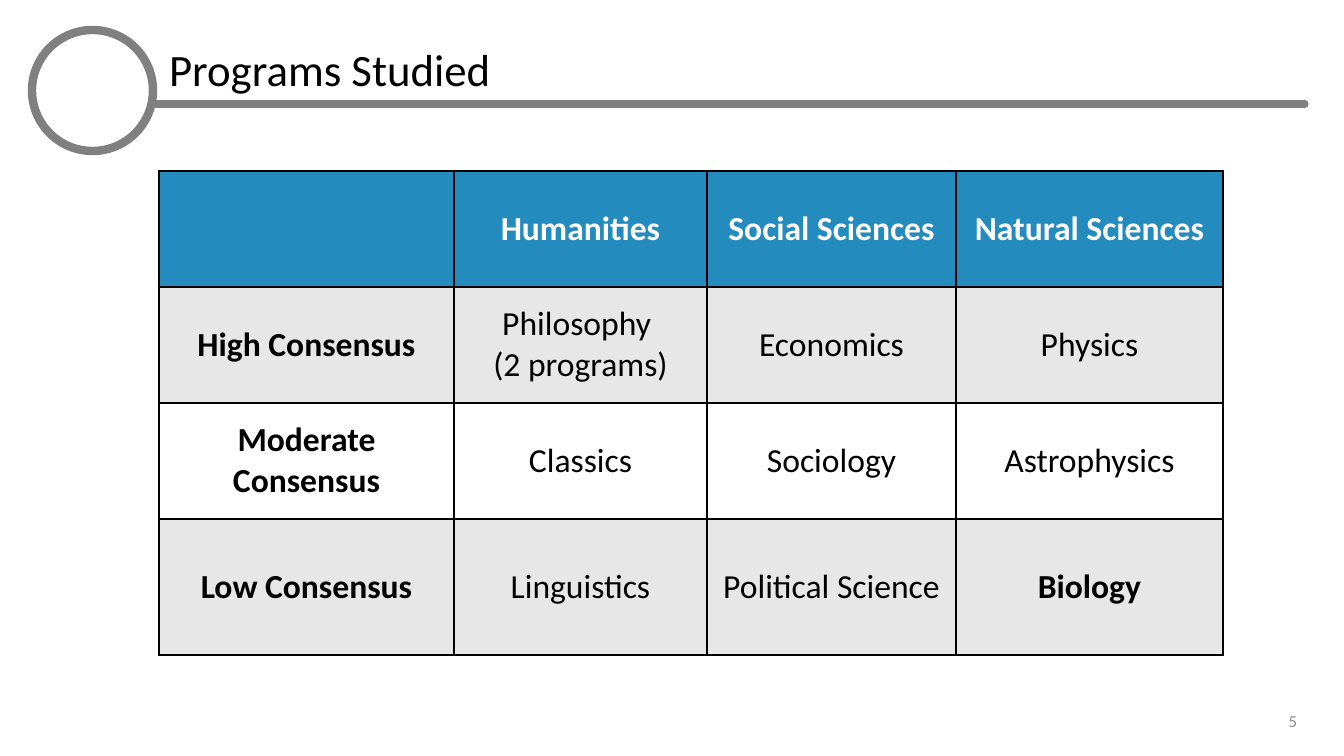
from pptx import Presentation
from pptx.dml.color import RGBColor
from pptx.enum.shapes import MSO_CONNECTOR, MSO_SHAPE
from pptx.enum.text import MSO_ANCHOR, PP_ALIGN
from pptx.oxml import parse_xml
from pptx.oxml.ns import nsdecls, qn
from pptx.util import Pt

EMU_PER_PX = 914400 / 100.8
BLACK = RGBColor(0x00, 0x00, 0x00)
WHITE = RGBColor(0xFF, 0xFF, 0xFF)
GREY = RGBColor(0x80, 0x80, 0x80)
NUMBER_GREY = RGBColor(0x8C, 0x8C, 0x8C)
BAND_GREY = RGBColor(0xE7, 0xE7, 0xE7)
HEADER_BLUE = RGBColor(0x23, 0x8B, 0xBE)

COLUMN_WIDTHS = [295, 253, 249, 267]
ROW_HEIGHTS = [116, 116, 116, 136]
PROGRAMS = [
    ["", "Humanities", "Social Sciences", "Natural Sciences"],
    ["High Consensus", "Philosophy \v(2 programs)", "Economics", "Physics"],
    ["Moderate Consensus", "Classics", "Sociology", "Astrophysics"],
    ["Low Consensus", "Linguistics", "Political Science", "Biology"],
]
BOLD_PROGRAMS = {"Biology"}


def px(*lengths):
    """Turn pixel lengths into EMU."""
    return [round(length * EMU_PER_PX) for length in lengths]


class SlideBuilder:
    """Holds the text style and the current slide."""

    def __init__(self, presentation):
        """Add a title-only slide."""
        self.font_name = "Calibri"
        self.slide = presentation.slides.add_slide(presentation.slide_layouts[5])

    def fill_text(self, frame, text, align, **font_format):
        """Fill a text frame with one formatted paragraph."""
        frame.word_wrap = True
        paragraph = frame.paragraphs[0]
        paragraph.text = text
        paragraph.alignment = align
        color = font_format.pop("color")
        for font in [paragraph.font] + [run.font for run in paragraph.runs]:
            font.name = self.font_name
            font.color.rgb = color
            for name, value in font_format.items():
                setattr(font, name, value)
        return paragraph

    def title(self, text, box):
        """Place and format the title placeholder."""
        title = self.slide.shapes.title
        for name, value in zip(("left", "top", "width", "height"), px(*box)):
            setattr(title, name, value)
        title.text_frame.vertical_anchor = MSO_ANCHOR.TOP
        paragraph = self.fill_text(title.text_frame, text, PP_ALIGN.LEFT,
                                   size=Pt(32), color=BLACK)
        paragraph.line_spacing = 0.9

    def text(self, text, box, align, **font_format):
        """Add a text box."""
        frame = self.slide.shapes.add_textbox(*px(*box)).text_frame
        frame.vertical_anchor = MSO_ANCHOR.MIDDLE
        self.fill_text(frame, text, align, **font_format)

    def ring(self, box, color, weight):
        """Add an unfilled ellipse."""
        shape = self.slide.shapes.add_shape(MSO_SHAPE.OVAL, *px(*box))
        shape.shadow.inherit = False
        shape.fill.background()
        shape.line.color.rgb = color
        shape.line.width = Pt(weight)

    def rule(self, ends, color, weight):
        """Add a straight line with round ends."""
        connector = self.slide.shapes.add_connector(MSO_CONNECTOR.STRAIGHT, *px(*ends))
        connector.line.color.rgb = color
        connector.line.width = Pt(weight)
        properties = connector.element.spPr
        properties.find(qn("a:ln")).set("cap", "rnd")
        properties.append(parse_xml(f"<a:effectLst {nsdecls('a')}/>"))

    def border(self, cell, color, weight):
        """Draw all four borders of a cell."""
        properties = cell._tc.get_or_add_tcPr()
        for side in ("lnL", "lnR", "lnT", "lnB"):
            properties.append(parse_xml(
                f'<a:{side} {nsdecls("a")} w="{Pt(weight)}"><a:solidFill>'
                f'<a:srgbClr val="{color}"/></a:solidFill></a:{side}>'))

    def table(self, rows, position, widths, heights):
        """Add a bordered table with a header row and banded rows."""
        box = px(*position, sum(widths), sum(heights))
        table = self.slide.shapes.add_table(len(rows), len(widths), *box).table
        for column, width in zip(table.columns, px(*widths)):
            column.width = width
        for row, height in zip(table.rows, px(*heights)):
            row.height = height
        for row_index, row in enumerate(rows):
            header = row_index == 0
            fill = HEADER_BLUE if header else BAND_GREY if row_index % 2 else WHITE
            for column_index, text in enumerate(row):
                cell = table.cell(row_index, column_index)
                self.border(cell, BLACK, 1)
                cell.fill.solid()
                cell.fill.fore_color.rgb = fill
                cell.vertical_anchor = MSO_ANCHOR.MIDDLE
                self.fill_text(cell.text_frame, text, PP_ALIGN.CENTER, size=Pt(24),
                               color=WHITE if header else BLACK,
                               bold=header or column_index == 0 or text in BOLD_PROGRAMS)


def main():
    """Build and save the presentation."""
    presentation = Presentation()
    presentation.slide_width, presentation.slide_height = px(1344, 756)
    builder = SlideBuilder(presentation)
    builder.ring((32, 30, 121, 121), GREY, 6)
    builder.rule((156, 104, 1305, 104), GREY, 5.25)
    builder.text("5", (950, 701, 357, 40), PP_ALIGN.RIGHT, size=Pt(12), color=NUMBER_GREY)
    builder.title("Programs Studied", (159, 43, 1025, 54))
    builder.table(PROGRAMS, (159, 171), COLUMN_WIDTHS, ROW_HEIGHTS)
    presentation.save("out.pptx")


if __name__ == "__main__":
    main()
